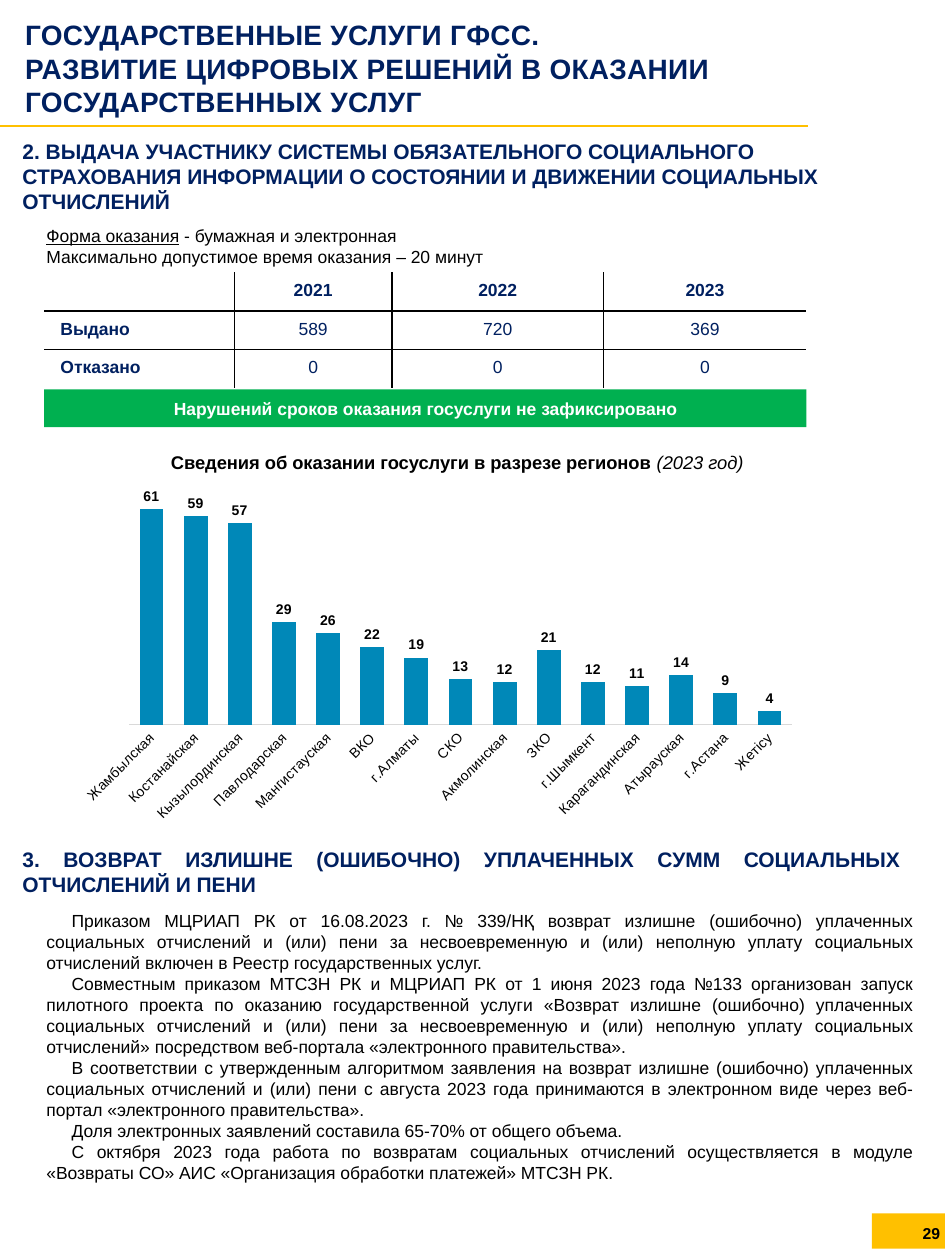
import pptx
import pptx.util
import pptx.chart.data
import pptx.dml.color
import pptx.enum.chart
import pptx.enum.shapes
import pptx.enum.text
import pptx.oxml
import pptx.oxml.ns

Inches = pptx.util.Inches
Pt = pptx.util.Pt
qn = pptx.oxml.ns.qn
ALIGN = pptx.enum.text.PP_ALIGN
SHAPE = pptx.enum.shapes.MSO_SHAPE
HUES = {"navy": "002060", "black": "000000", "white": "FFFFFF", "green": "00B050",
        "gold": "FFC000", "blue": "0088B8", "gray": "D9D9D9"}
HUES = {name: pptx.dml.color.RGBColor.from_string(code) for name, code in HUES.items()}


def write(frame, paras, size, hue, align=ALIGN.LEFT, left=0, first=0, space=0):
    frame.word_wrap = True
    for i, runs in enumerate(paras):
        para = frame.add_paragraph() if i else frame.paragraphs[0]
        para.alignment = align
        props = para._p.get_or_add_pPr()
        props.set("marL", str(Inches(left)))
        props.set("indent", str(Inches(first)))
        for text, style in runs:
            run = para.add_run()
            run.text = text
            font = run.font
            font.name = "Arial"
            font.size = Pt(size)
            font.color.rgb = HUES[hue]
            font.bold = "b" in style
            font.italic = "i" in style
            font.underline = "u" in style
            if space:
                run._r.get_or_add_rPr().set("spc", str(space))


def block(left, top, width, height, fill):
    shape = slide.shapes.add_shape(SHAPE.RECTANGLE, Inches(left), Inches(top), Inches(width), Inches(height))
    shape.shadow.inherit = False
    shape.fill.solid()
    shape.fill.fore_color.rgb = HUES[fill]
    shape.line.fill.background()
    return shape


deck = pptx.Presentation()
deck.slide_width = Inches(7.5)
deck.slide_height = Inches(10)
slide = deck.slides.add_slide(deck.slide_layouts[6])

spec_rows = [[("Форма оказания", "u"), (" - бумажная и электронная", "")],
             [("Максимально допустимое время оказания – 20 минут", "")]]
box = slide.shapes.add_textbox(Inches(0.27), Inches(1.74), Inches(4.92), Inches(0.44))
write(box.text_frame, spec_rows, 10, "black", ALIGN.JUSTIFY)

data = pptx.chart.data.CategoryChartData()
data.categories = ["Жамбылская", "Костанайская", "Кызылординская", "Павлодарская", "Мангистауская",
                   "ВКО", "г.Алматы", "СКО", "Акмолинская", "ЗКО", "г.Шымкент", "Карагандинская",
                   "Атырауская", "г.Астана", "Жетiсу"]
data.add_series("Series 1", [61, 59, 57, 29, 26, 22, 19, 13, 12, 21, 12, 11, 14, 9, 4])
chart = slide.shapes.add_chart(pptx.enum.chart.XL_CHART_TYPE.COLUMN_CLUSTERED, Inches(0.56), Inches(3.73),
                               Inches(5.84), Inches(2.85), data).chart
chart.has_legend = False
chart.has_title = False
chart.font.name = "Calibri"
chart.font.size = Pt(10)
chart.font.color.rgb = HUES["black"]
plot = chart.plots[0]
plot.gap_width = 85
plot.overlap = -27
plot.vary_by_categories = False
bars = plot.series[0]
bars.format.fill.solid()
bars.format.fill.fore_color.rgb = HUES["blue"]
tags = bars.data_labels
tags.show_value = True
tags.position = pptx.enum.chart.XL_LABEL_POSITION.OUTSIDE_END
axis = chart.category_axis
axis.major_tick_mark = pptx.enum.chart.XL_TICK_MARK.NONE
axis.format.line.color.rgb = HUES["gray"]
axis.format.line.width = Pt(0.75)
for font in (tags.font, axis.tick_labels.font):
    font.name = "Arial"
    font.size = Pt(8)
    font.color.rgb = HUES["black"]
tags.font.bold = True
axis._element.find(qn("c:txPr")).find(qn("a:bodyPr")).set("rot", "-2700000")
chart.value_axis.maximum_scale = 70
chart.value_axis.minimum_scale = 0
chart.value_axis.has_major_gridlines = False
chart.value_axis.visible = False
area = chart._chartSpace.chart.plotArea
for old in area.findall(qn("c:layout")):
    area.remove(old)
area.insert(0, pptx.oxml.parse_xml(
    '<c:layout xmlns:c="http://schemas.openxmlformats.org/drawingml/2006/chart"><c:manualLayout>'
    '<c:layoutTarget val="inner"/><c:xMode val="edge"/><c:yMode val="edge"/>'
    '<c:x val="0.08"/><c:y val="0.02"/><c:w val="0.9"/><c:h val="0.69"/></c:manualLayout></c:layout>'))

rows = [["", "2021", "2022", "2023"], ["Выдано", "589", "720", "369"], ["Отказано", "0", "0", "0"]]
table = slide.shapes.add_table(3, 4, Inches(0.35), Inches(2.16), Inches(6.05), Inches(0.9)).table
table.first_row = False
table.horz_banding = False
for col, width in zip(table.columns, [1.51, 1.25, 1.68, 1.61]):
    col.width = Inches(width)
for i, row in enumerate(rows):
    table.rows[i].height = Inches(0.3)
    for j, text in enumerate(row):
        cell = table.cell(i, j)
        cell.margin_left = cell.margin_right = Inches(0.13)
        cell.margin_top = cell.margin_bottom = Inches(0.07)
        cell.fill.background()
        head = i == 0 or j == 0
        if text:
            write(cell.text_frame, [[(text, "b" if head else "")]], 10, "navy",
                  ALIGN.CENTER if j else ALIGN.LEFT)
        else:
            cell.text_frame.paragraphs[0].font.size = Pt(10)
        sides = {"L": j > 0, "R": j < 3, "T": i > 0, "B": i < 2}
        for k, (side, shown) in enumerate(sides.items()):
            ink = f'<a:solidFill><a:srgbClr val="{HUES["black"]}"/></a:solidFill>' if shown else "<a:noFill/>"
            cell._tc.get_or_add_tcPr().insert(k, pptx.oxml.parse_xml(
                f'<a:ln{side} xmlns:a="http://schemas.openxmlformats.org/drawingml/2006/main" '
                f'w="{Pt(1)}">{ink}</a:ln{side}>'))

note = block(0.35, 3.09, 6.05, 0.3, "green").text_frame
note.margin_left = note.margin_right = Inches(0.13)
note.margin_top = note.margin_bottom = Inches(0.07)
write(note, [[("Нарушений сроков оказания госуслуги не зафиксировано", "b")]], 10, "white", ALIGN.CENTER)

box = slide.shapes.add_textbox(Inches(0.86), Inches(3.53), Inches(5.54), Inches(0.28))
write(box.text_frame, [[("Сведения об оказании госуслуги в разрезе регионов ", "b"), ("(2023 год)", "i")]],
      10.5, "black", ALIGN.CENTER)

box = slide.shapes.add_textbox(Inches(0.18), Inches(0.12), Inches(7.24), Inches(0.84))
title = box.text_frame
title.margin_left = title.margin_right = title.margin_bottom = 0
title.margin_top = Inches(0.02)
write(title, [[("ГОСУДАРСТВЕННЫЕ УСЛУГИ ГФСС.", "b")],
              [("РАЗВИТИЕ ЦИФРОВЫХ РЕШЕНИЙ В ОКАЗАНИИ ГОСУДАРСТВЕННЫХ УСЛУГ", "b")]],
      16, "navy", left=0.02, space=20)

heads = [
    (1.05, 7.07, 0.71, ALIGN.LEFT, "2. ВЫДАЧА УЧАСТНИКУ СИСТЕМЫ ОБЯЗАТЕЛЬНОГО СОЦИАЛЬНОГО СТРАХОВАНИЯ "
     "ИНФОРМАЦИИ О СОСТОЯНИИ И ДВИЖЕНИИ СОЦИАЛЬНЫХ ОТЧИСЛЕНИЙ"),
    (6.67, 7.17, 0.5, ALIGN.JUSTIFY, "3. ВОЗВРАТ ИЗЛИШНЕ (ОШИБОЧНО) УПЛАЧЕННЫХ СУММ СОЦИАЛЬНЫХ "
     "ОТЧИСЛЕНИЙ И ПЕНИ")]
for top, width, height, align, text in heads:
    box = slide.shapes.add_textbox(Inches(0.08), Inches(top), Inches(width), Inches(height))
    write(box.text_frame, [[(text, "b")]], 12, "navy", align)

rule = slide.shapes.add_connector(pptx.enum.shapes.MSO_CONNECTOR.STRAIGHT, 0, Inches(1), Inches(6.41), Inches(1))
rule.line.color.rgb = HUES["gold"]
rule.line.width = Pt(1.5)
rule._element.spPr.append(pptx.oxml.parse_xml(
    '<a:effectLst xmlns:a="http://schemas.openxmlformats.org/drawingml/2006/main"/>'))

body = [
    "Приказом МЦРИАП РК от 16.08.2023 г. № 339/НҚ возврат излишне (ошибочно) уплаченных социальных "
    "отчислений и (или) пени за несвоевременную и (или) неполную уплату социальных отчислений включен "
    "в Реестр государственных услуг.",
    "Совместным приказом МТСЗН РК и МЦРИАП РК от 1 июня 2023 года №133 организован запуск пилотного "
    "проекта по оказанию государственной услуги «Возврат излишне (ошибочно) уплаченных социальных "
    "отчислений и (или) пени за несвоевременную и (или) неполную уплату социальных отчислений» "
    "посредством веб-портала «электронного правительства».",
    "В соответствии с утвержденным алгоритмом заявления на возврат излишне (ошибочно) уплаченных "
    "социальных отчислений и (или) пени с августа 2023 года принимаются в электронном виде через "
    "веб-портал «электронного правительства».",
    "Доля электронных заявлений составила 65-70% от общего объема.",
    "С октября 2023 года работа по возвратам социальных отчислений осуществляется в модуле "
    "«Возвраты СО» АИС «Организация обработки платежей» МТСЗН РК."]
box = slide.shapes.add_textbox(Inches(0.27), Inches(7.17), Inches(7.07), Inches(2.29))
write(box.text_frame, [[(text, "")] for text in body], 10, "black", ALIGN.JUSTIFY, first=0.2)

block(6.92, 9.63, 0.59, 0.28, "gold")
box = slide.shapes.add_textbox(Inches(5.87), Inches(9.52), Inches(1.69), Inches(0.53))
box.text_frame.vertical_anchor = pptx.enum.text.MSO_ANCHOR.MIDDLE
write(box.text_frame, [[("29", "b")]], 9, "black", ALIGN.RIGHT)

deck.save("out.pptx")
